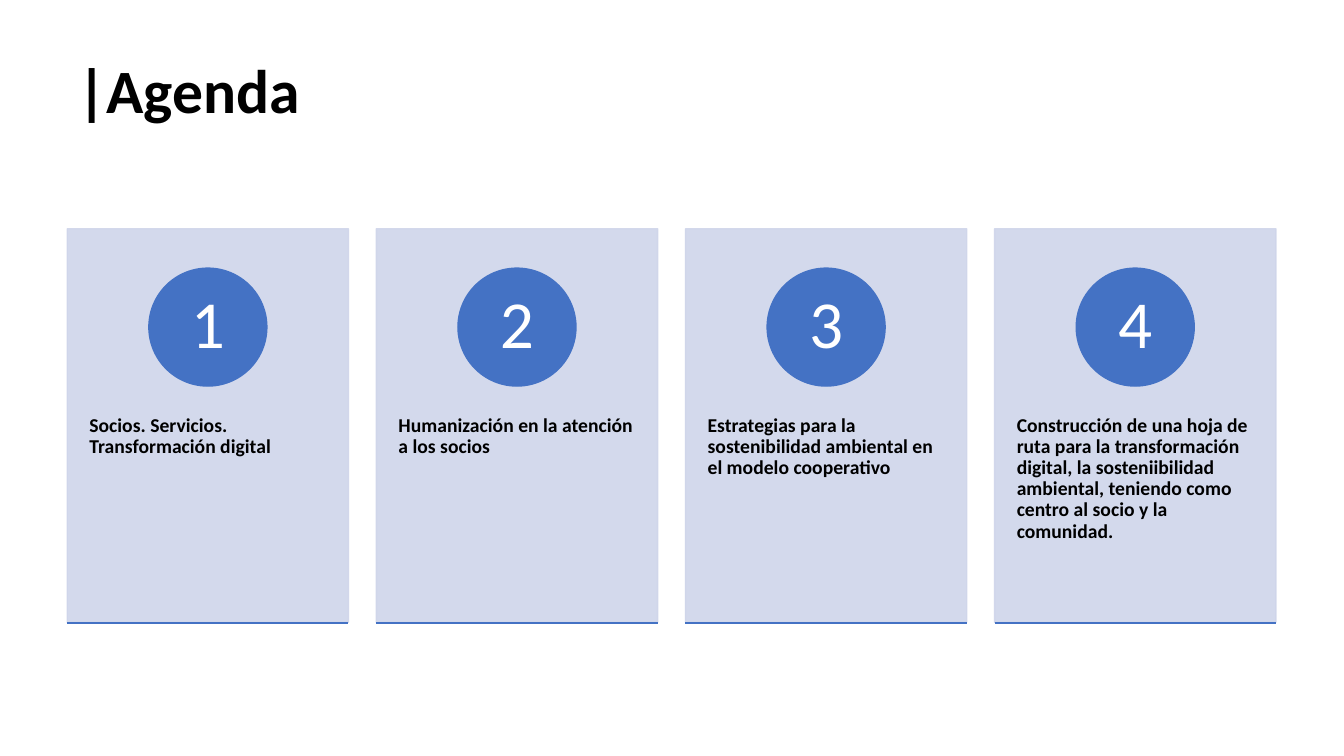
import pptx
import pptx.util
import pptx.dml.color
import pptx.enum.shapes
import pptx.enum.text
import pptx.oxml.ns
import lxml.etree

COLORS = {"ink": "000000", "paper": "FFFFFF", "card": "CFD5EA", "accent": "4472C4"}
TOPICS = [
    "Socios. Servicios. Transformación digital",
    "Humanización en la atención a los socios",
    "Estrategias para la sostenibilidad ambiental en el modelo cooperativo",
    "Construcción de una hoja de ruta para la transformación digital, "
    "la sosteniibilidad ambiental, teniendo como centro al socio y la comunidad.",
]
LEFT, PITCH, CARD_W = 5, 23, 20.93
CARD_TOP, CARD_H, BASELINE = 30.27, 52.05, 82.4
CIRCLE_TOP, CIRCLE_W, CIRCLE_H = 35.47, 8.78, 15.6
TOPIC_TOP, TOPIC_H = 50.13, 31.2


class AgendaSlide:
    font = "Calibri"

    def __init__(self):
        self.prs = pptx.Presentation()
        self.prs.slide_width = pptx.util.Inches(13.33)
        self.prs.slide_height = pptx.util.Inches(7.5)
        self.s = self.prs.slides.add_slide(self.prs.slide_layouts[5])

    def color(self, name):
        return pptx.dml.color.RGBColor.from_string(COLORS[name])

    def x(self, percent):
        return int(self.prs.slide_width * percent / 100)

    def y(self, percent):
        return int(self.prs.slide_height * percent / 100)

    def box(self, left, top, width, height):
        return self.x(left), self.y(top), self.x(width), self.y(height)

    def set_text(self, sp, text, size, color, bold, align, anchor, insets):
        tf = sp.text_frame
        tf.text = text
        tf.word_wrap = True
        tf.auto_size = pptx.enum.text.MSO_AUTO_SIZE.NONE
        tf.vertical_anchor = anchor
        tf.margin_left = tf.margin_right = pptx.util.Inches(insets[0])
        tf.margin_top = tf.margin_bottom = pptx.util.Inches(insets[1])
        p = tf.paragraphs[0]
        p.alignment = align
        p.line_spacing = 0.9
        font = p.runs[0].font
        font.name, font.size, font.bold = self.font, pptx.util.Pt(size), bold
        font.color.rgb = self.color(color)

    def title(self, text, *area):
        sp = self.s.shapes.title
        sp.left, sp.top, sp.width, sp.height = self.box(*area)
        self.set_text(sp, text, 44, "ink", True, pptx.enum.text.PP_ALIGN.LEFT,
                      pptx.enum.text.MSO_ANCHOR.MIDDLE, (0.1, 0.05))

    def shape(self, kind, color, *area, opacity=100):
        sp = self.s.shapes.add_shape(kind, *self.box(*area))
        sp.shadow.inherit = False
        sp.fill.solid()
        sp.line.fill.solid()
        sp.line.width = pptx.util.Pt(1)
        for paint in (sp.fill, sp.line.fill):
            paint.fore_color.rgb = self.color(color)
        if opacity < 100:
            for clr in sp.element.spPr.iter(pptx.oxml.ns.qn("a:srgbClr")):
                alpha = lxml.etree.SubElement(clr, pptx.oxml.ns.qn("a:alpha"))
                alpha.set("val", str(opacity * 1000))
        return sp

    def circle(self, number, *area):
        sp = self.shape(pptx.enum.shapes.MSO_SHAPE.OVAL, "accent", *area)
        self.set_text(sp, str(number), 48, "paper", False, pptx.enum.text.PP_ALIGN.CENTER,
                      pptx.enum.text.MSO_ANCHOR.MIDDLE, (0.09, 0.01))

    def topic(self, text, *area):
        sp = self.s.shapes.add_textbox(*self.box(*area))
        self.set_text(sp, text, 14, "ink", True, pptx.enum.text.PP_ALIGN.LEFT,
                      pptx.enum.text.MSO_ANCHOR.TOP, (0.22, 0.36))

    def rule(self, left, top, width):
        line = self.s.shapes.add_connector(
            pptx.enum.shapes.MSO_CONNECTOR.STRAIGHT,
            self.x(left), self.y(top), self.x(left + width), self.y(top))
        line.line.color.rgb = self.color("accent")
        line.line.width = pptx.util.Pt(1)
        lxml.etree.SubElement(line.element.spPr, pptx.oxml.ns.qn("a:effectLst"))

    def card(self, column, text):
        left = LEFT + column * PITCH
        self.shape(pptx.enum.shapes.MSO_SHAPE.RECTANGLE, "card",
                   left, CARD_TOP, CARD_W, CARD_H, opacity=90)
        self.topic(text, left, TOPIC_TOP, CARD_W, TOPIC_H)
        self.circle(column + 1, left + (CARD_W - CIRCLE_W) / 2, CIRCLE_TOP, CIRCLE_W, CIRCLE_H)
        self.rule(left, BASELINE, CARD_W)


def main():
    agenda = AgendaSlide()
    agenda.title("|Agenda", LEFT, 4, 90, 16.67)
    for column, text in enumerate(TOPICS):
        agenda.card(column, text)
    agenda.prs.save("out.pptx")


if __name__ == "__main__":
    main()
